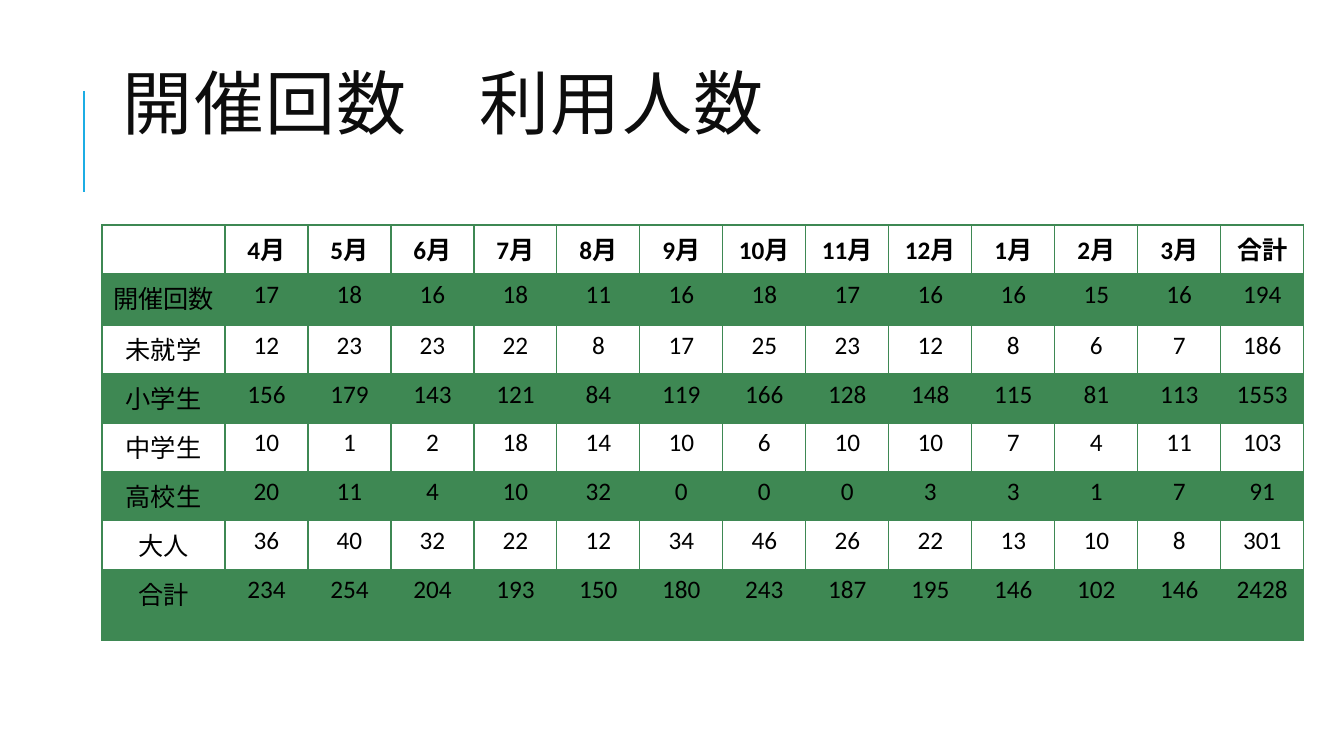
from lxml.etree import SubElement as Sub
from pptx import Presentation
from pptx.dml.color import RGBColor as RGB
from pptx.enum.lang import MSO_LANGUAGE_ID as LANG
from pptx.enum.shapes import MSO_CONNECTOR as LINK
from pptx.enum.text import MSO_ANCHOR as ANCHOR, PP_ALIGN as ALIGN
from pptx.oxml.ns import qn
from pptx.util import Pt

# Content
TITLE = "開催回数　利用人数"
HEAD = ["", "4月", "5月", "6月", "7月", "8月", "9月", "10月", "11月",
        "12月", "1月", "2月", "3月", "合計"]
ROWS = [
    ("開催回数", 17, 18, 16, 18, 11, 16, 18, 17, 16, 16, 15, 16, 194),
    ("未就学", 12, 23, 23, 22, 8, 17, 25, 23, 12, 8, 6, 7, 186),
    ("小学生", 156, 179, 143, 121, 84, 119, 166, 128, 148, 115, 81, 113, 1553),
    ("中学生", 10, 1, 2, 18, 14, 10, 6, 10, 10, 7, 4, 11, 103),
    ("高校生", 20, 11, 4, 10, 32, 0, 0, 0, 3, 3, 1, 7, 91),
    ("大人", 36, 40, 32, 22, 12, 34, 46, 26, 22, 13, 10, 8, 301),
    ("合計", 234, 254, 204, 193, 150, 180, 243, 187, 195, 146, 102, 146, 2428),
]

THEME = {
    "ink": "0D0D0D", "black": "000000", "accent": "1CADE4", "green": "3E8853",
    "band": 20, "title": 50, "body": 18, "head": "Cabin", "text": "Calibri",
}

# Layout in px
WIDE, HIGH = 1344, 756
SCALE = 12192000 / WIDE
BAR = (84, 91, 84, 192)
TITLE_BOX = (113, 64, 1071, 165)
LEFT, TOP = 102, 225
COLS = [123] + [83] * (len(HEAD) - 1)
TALL = [49, 51] + [49] * (len(ROWS) - 2) + [71]


def px(*vals):
    return [round(v * SCALE) for v in vals]


def write(frame, text, size, font, color, bold=False, align=None,
          space=None, gap=None):
    par = frame.paragraphs[0]
    par.alignment, par.line_spacing = align, space
    run = par.add_run()
    run.text = text
    face = run.font
    face.size, face.name, face.bold = Pt(size), font, bold
    face.color.rgb = RGB.from_string(color)
    face.language_id = LANG.JAPANESE
    if gap:
        run._r.get_or_add_rPr().set("spc", str(gap * 100))


def edge(cell, side, width):
    line = Sub(cell._tc.get_or_add_tcPr(), qn("a:" + side), w=str(Pt(width)))
    fill = Sub(line, qn("a:solidFill"))
    Sub(fill, qn("a:srgbClr"), val=THEME["green"])


def tint(cell):
    cell.fill.solid()
    cell.fill.fore_color.rgb = RGB.from_string(THEME["green"])
    color = cell._tc.tcPr.find(".//" + qn("a:srgbClr"))
    Sub(color, qn("a:alpha"), val=str(THEME["band"] * 1000))


def add_bar(slide):
    bar = slide.shapes.add_connector(LINK.STRAIGHT, *px(*BAR))
    bar.line.color.rgb = RGB.from_string(THEME["accent"])
    bar.line.width = Pt(1.5)
    Sub(bar._element.spPr, qn("a:effectLst"))


def add_title(slide):
    frame = slide.shapes.add_textbox(*px(*TITLE_BOX)).text_frame
    frame.word_wrap = True
    frame.vertical_anchor = ANCHOR.TOP
    write(frame, TITLE, THEME["title"], THEME["head"], THEME["ink"],
          space=0.9, gap=1)


def add_grid(slide):
    data = [HEAD] + ROWS
    box = px(LEFT, TOP, sum(COLS), sum(TALL))
    grid = slide.shapes.add_table(len(data), len(HEAD), *box).table
    grid.first_row = grid.horz_banding = False
    for col, wide in zip(grid.columns, px(*COLS)):
        col.width = wide
    for row, high in zip(grid.rows, px(*TALL)):
        row.height = high
    for r, vals in enumerate(data):
        for c, val in enumerate(vals):
            cell = grid.cell(r, c)
            # Borders come before the fill; the header rule is thicker
            for side in ("lnL", "lnR", "lnT", "lnB"):
                thick = (r, side) in ((0, "lnB"), (1, "lnT"))
                edge(cell, side, 2 if thick else 1)
            if r % 2:
                tint(cell)
            else:
                cell.fill.background()
            if val != "":
                write(cell.text_frame, str(val), THEME["body"], THEME["text"],
                      THEME["black"], bold=r == 0, align=ALIGN.CENTER)


def main():
    deck = Presentation()
    deck.slide_width, deck.slide_height = px(WIDE, HIGH)
    slide = deck.slides.add_slide(deck.slide_layouts[6])
    add_bar(slide)
    add_title(slide)
    add_grid(slide)
    deck.save("out.pptx")


if __name__ == "__main__":
    main()
